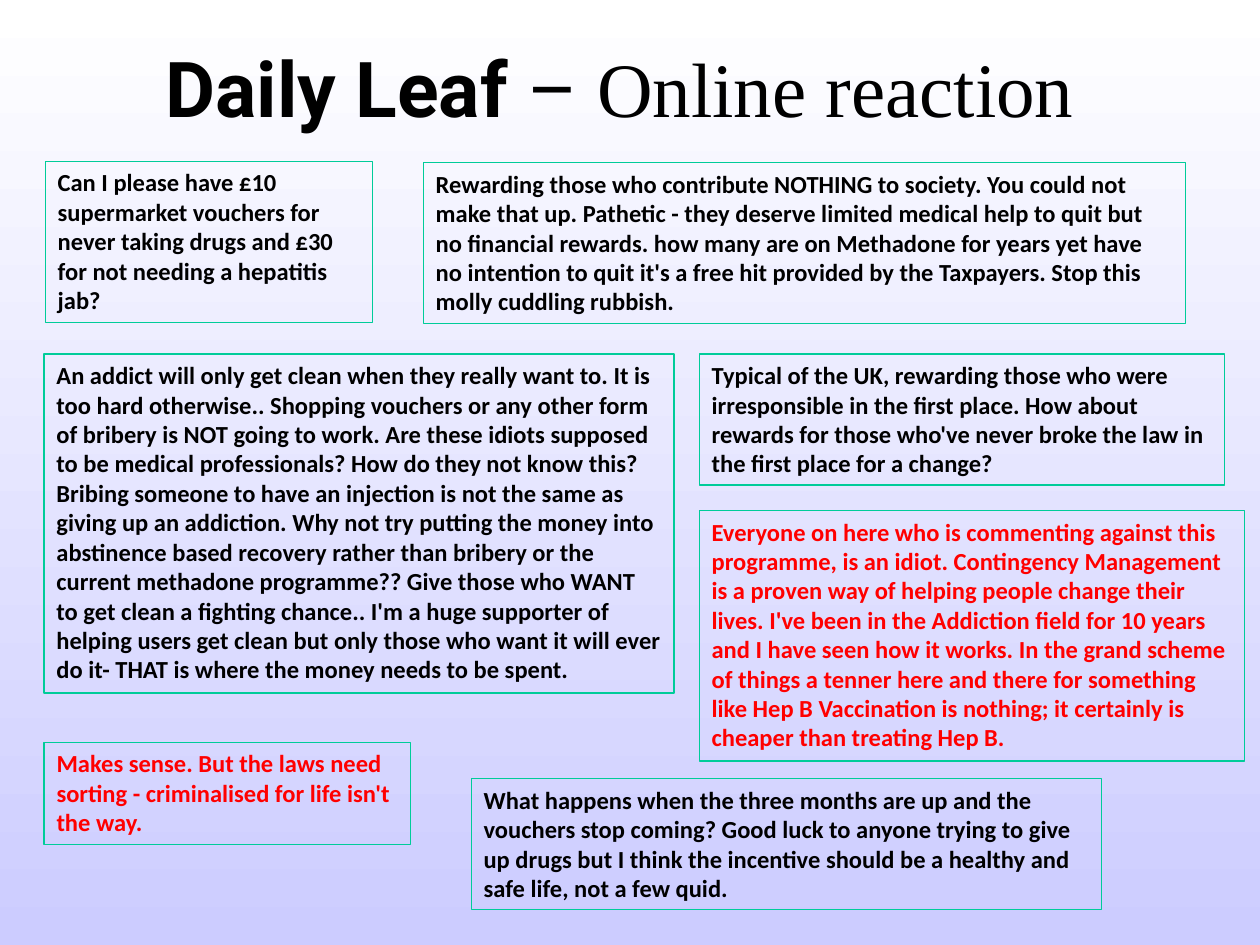
"""Build a slide of online reader comments in outlined boxes."""
from pptx import Presentation
from pptx.dml.color import RGBColor
from pptx.enum.shapes import MSO_SHAPE
from pptx.enum.text import MSO_ANCHOR, MSO_AUTO_SIZE, PP_ALIGN
from pptx.util import Inches, Pt

BLACK = RGBColor(0x00, 0x00, 0x00)
RED = RGBColor(0xFF, 0x00, 0x00)
GREEN = RGBColor(0x00, 0xCC, 0x99)
WHITE = RGBColor(0xFF, 0xFF, 0xFF)
LAVENDER = RGBColor(0xCC, 0xCC, 0xFF)

TITLE_SPANS = [
    ("Daily Leaf ", "Roboto", True),
    ("– ", "Roboto", False),
    ("Online reaction", "Times New Roman", False),
]

COMMENTS = [
    (0.36, 1.28, 2.6, 1.28, BLACK,
     "Can I please have £10 supermarket vouchers for never taking drugs and £30 "
     "for not needing a hepatitis jab?"),
    (3.36, 1.29, 6.05, 1.28, BLACK,
     "Rewarding those who contribute NOTHING to society. You could not make that up. "
     "Pathetic - they deserve limited medical help to quit but no financial rewards. "
     "how many are on Methadone for years yet have no intention to quit it's a free hit "
     "provided by the Taxpayers. Stop this molly cuddling rubbish."),
    (0.35, 2.81, 5, 2.69, BLACK,
     "An addict will only get clean when they really want to. It is too hard otherwise.. "
     "Shopping vouchers or any other form of bribery is NOT going to work. Are these "
     "idiots supposed to be medical professionals? How do they not know this? Bribing "
     "someone to have an injection is not the same as giving up an addiction. Why not try "
     "putting the money into abstinence based recovery rather than bribery or the current "
     "methadone programme?? Give those who WANT to get clean a fighting chance.. I'm a "
     "huge supporter of helping users get clean but only those who want it will ever do "
     "it- THAT is where the money needs to be spent."),
    (5.55, 2.81, 4.17, 1.04, BLACK,
     "Typical of the UK, rewarding those who were irresponsible in the first place. How "
     "about rewards for those who've never broke the law in the first place for a change?"),
    (3.74, 6.18, 5, 1.04, BLACK,
     "What happens when the three months are up and the vouchers stop coming? Good luck "
     "to anyone trying to give up drugs but I think the incentive should be a healthy and "
     "safe life, not a few quid."),
    (0.35, 5.89, 2.91, 0.81, RED,
     "Makes sense. But the laws need sorting - criminalised for life isn't the way."),
    (5.55, 4.05, 4.33, 1.99, RED,
     "Everyone on here who is commenting against this programme, is an idiot. Contingency "
     "Management is a proven way of helping people change their lives. I've been in the "
     "Addiction field for 10 years and I have seen how it works. In the grand scheme of "
     "things a tenner here and there for something like Hep B Vaccination is nothing; it "
     "certainly is cheaper than treating Hep B."),
]


def format_span(span, font_name, size, bold, color):
    span.font.name = font_name
    span.font.size = Pt(size)
    span.font.bold = bold
    span.font.color.rgb = color


deck = Presentation()
deck.slide_width = Inches(10)
deck.slide_height = Inches(7.5)
page = deck.slides.add_slide(deck.slide_layouts[5])

backdrop = page.background.fill
backdrop.gradient()
backdrop.gradient_angle = 270
for stop, position, color in zip(backdrop.gradient_stops, (0, 1), (WHITE, LAVENDER)):
    stop.position = position
    stop.color.rgb = color

title = page.shapes.title
title.left, title.top = Inches(0.67), Inches(0.29)
title.width, title.height = Inches(8.5), Inches(0.79)
title.text_frame.auto_size = MSO_AUTO_SIZE.NONE
title.text_frame.vertical_anchor = MSO_ANCHOR.MIDDLE
heading = title.text_frame.paragraphs[0]
heading.alignment = PP_ALIGN.CENTER
for text, font_name, bold in TITLE_SPANS:
    span = heading.add_run()
    span.text = text
    format_span(span, font_name, 44, bold, BLACK)

for left, top, width, height, color, text in COMMENTS:
    box = page.shapes.add_shape(MSO_SHAPE.RECTANGLE, Inches(left), Inches(top),
                                Inches(width), Inches(height))
    box.shadow.inherit = False
    box.fill.background()
    box.line.color.rgb = GREEN
    box.line.width = Pt(0.75)
    frame = box.text_frame
    frame.word_wrap = True
    frame.auto_size = MSO_AUTO_SIZE.SHAPE_TO_FIT_TEXT
    frame.vertical_anchor = MSO_ANCHOR.TOP
    frame.text = text
    para = frame.paragraphs[0]
    para.alignment = PP_ALIGN.LEFT
    format_span(para.runs[0], "Calibri", 14, True, color)

deck.save("out.pptx")
